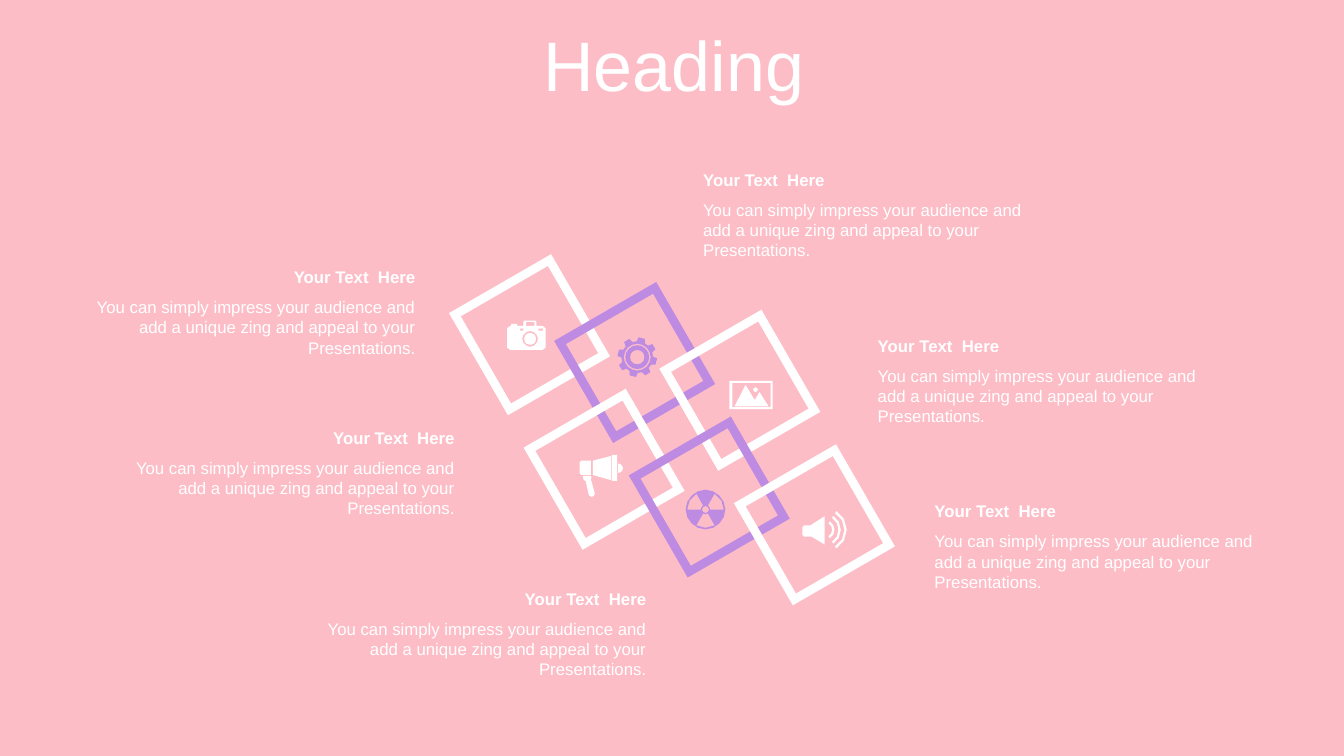
from math import cos, radians, sin

from pptx import Presentation
from pptx.dml.color import RGBColor
from pptx.enum.shapes import MSO_SHAPE
from pptx.enum.text import MSO_ANCHOR, MSO_AUTO_SIZE, PP_ALIGN
from pptx.util import Cm, Pt

PINK, WHITE, PURPLE = "FDBDC7", "FFFFFF", "BE8BE2"
LABEL = "Your Text  Here"
BODY = ("You can simply impress your audience and add a unique zing "
        "and appeal to your Presentations.")


def color(code):
    return RGBColor.from_string(code)


def paint(shape, code):
    shape.shadow.inherit = False
    shape.fill.solid()
    shape.fill.fore_color.rgb = color(code)
    shape.line.fill.background()


def write(shape, text, size=12, bold=False, align=PP_ALIGN.LEFT,
          anchor=MSO_ANCHOR.TOP, fit=MSO_AUTO_SIZE.SHAPE_TO_FIT_TEXT,
          before=0, spacing=1.0):
    frame = shape.text_frame
    frame.word_wrap = True
    frame.auto_size = fit
    frame.vertical_anchor = anchor
    para = frame.paragraphs[0]
    para.alignment = align
    para.space_before = Pt(before)
    para.line_spacing = spacing
    run = para.add_run()
    run.text = text
    font = run.font
    font.name, font.size, font.bold = "Arial", Pt(size), bold
    font.color.rgb = color(WHITE)


def heading(slide, left, top, width, height):
    title = slide.shapes.title
    title.left, title.top = Cm(left), Cm(top)
    title.width, title.height = Cm(width), Cm(height)
    write(title, "Heading", size=50, align=PP_ALIGN.CENTER,
          anchor=MSO_ANCHOR.MIDDLE, fit=MSO_AUTO_SIZE.NONE,
          before=10, spacing=0.8)


def frames(slide, left, top, side):
    """Two slanted rows of three interlocking tilted frames."""
    group = slide.shapes.add_group_shape().shapes
    for row in range(2):
        for col in range(3):
            x = left + 2.65 * col + 1.88 * row
            y = top + 0.7 * col + 3.39 * row
            tile = group.add_shape(MSO_SHAPE.FRAME, Cm(x), Cm(y),
                                   Cm(side), Cm(side))
            tile.adjustments[0] = 0.073
            tile.rotation = 330
            paint(tile, PURPLE if col == 1 else WHITE)


def note(slide, left, top, width, align):
    group = slide.shapes.add_group_shape().shapes
    label = group.add_textbox(Cm(left), Cm(top), Cm(width), Cm(0.76))
    write(label, LABEL, bold=True, align=align)
    body = group.add_textbox(Cm(left), Cm(top + 0.76), Cm(width), Cm(1.8))
    write(body, BODY, align=align)


# Icon outlines are lists of points in tenths of a millimetre.
def polar(x, y, radius, angle):
    turn = radians(angle)
    return x + radius * cos(turn), y + radius * sin(turn)


def arc(x, y, radius, start, end):
    steps = max(2, round(abs(end - start) / 30))
    return [polar(x, y, radius, start + (end - start) * i / steps)
            for i in range(steps + 1)]


def ring(x, y, radius):
    """A circle, with more corners the larger it is."""
    sides = 16 if radius > 25 else 12 if radius > 12 else 8
    return [polar(x, y, radius, 360 * i / sides) for i in range(sides)]


def band(x, y, outer, inner, start, end):
    return arc(x, y, outer, start, end) + arc(x, y, inner, end, start)


def box(left, top, right, bottom):
    return [(left, top), (right, top), (right, bottom), (left, bottom)]


def camera():
    shell = [(43, 0), (71, 0), (74, 3), (74, 13), (89, 13), (97, 19),
             (97, 68), (89, 74), (8, 74), (0, 68), (0, 19), (8, 13),
             (10, 13), (10, 8), (25, 8), (25, 13), (41, 13), (41, 3)]
    return [shell, ring(58, 46, 20), ring(58, 46, 15), box(33, 20, 41, 25),
            box(79, 20, 91, 25), box(48, 3, 69, 13)]


def gear():
    rim = [polar(50, 50, radius, -77 + 45 * tooth + turn)
           for tooth in range(8)
           for radius, turn in ((40, -15), (50, -9), (50, 9), (40, 15))]
    return [rim] + [ring(50, 50, radius) for radius in (34, 30, 18)]


def photo():
    hills = [(41, 10), (64, 48), (76, 28), (99, 64), (13, 64)]
    return [box(0, 0, 109, 71), box(8, 5, 104, 66), hills, ring(66, 22, 6)]


def horn():
    grip = [(28, 53), (30, 58), (28, 61), (38, 97), (36, 104), (30, 106),
            (23, 102), (15, 66), (10, 64), (8, 53)]
    base = [(4, 15), (28, 15), (28, 51), (4, 51), (0, 47), (0, 19)]
    cone = [(79, 3), (79, 64), (33, 51), (33, 15)]
    return [grip, base, cone, box(81, 0, 94, 66), arc(97, 34, 12, -90, 90)]


def hazard():
    return ([ring(50, 50, 50), ring(50, 50, 9)]
            + [band(50, 50, 46, 12, start, start + 60)
               for start in (60, 180, 300)])


def sound():
    cone = [(56, 13), (56, 84), (23, 64), (4, 64), (0, 59), (0, 41),
            (4, 36), (20, 36)]
    return [cone] + [band(56, 47, radius, radius - 6, -58, 58)
                     for radius in (25, 41, 56)]


def icon(slide, paths, left, top, code):
    """Join closed outlines into one shape; nested ones become holes."""
    first, *others = paths
    pen = slide.shapes.build_freeform(*first[0], scale=Cm(0.01))
    pen.add_line_segments(first[1:])
    for points in others:
        pen.move_to(*points[0])
        pen.add_line_segments(points[1:])
    paint(pen.convert_to_shape(Cm(left), Cm(top)), code)


def main():
    deck = Presentation()
    deck.slide_width, deck.slide_height = Cm(33.87), Cm(19.05)
    slide = deck.slides.add_slide(deck.slide_layouts[5])
    slide.background.fill.solid()
    slide.background.fill.fore_color.rgb = color(PINK)

    heading(slide, 0.9, 0.79, 32.16, 2.01)
    frames(slide, 11.86, 6.95, 2.97)
    for left, top in ((17.47, 4.15), (21.87, 8.33), (23.3, 12.5)):
        note(slide, left, top, 8.81, PP_ALIGN.LEFT)
    for left, top in ((1.63, 6.6), (2.62, 10.65), (7.45, 14.71)):
        note(slide, left, top, 9.09, PP_ALIGN.RIGHT)
    for draw, left, top, code in (
            (sound, 20.22, 12.88, WHITE), (hazard, 17.28, 12.34, PURPLE),
            (horn, 14.61, 11.46, WHITE), (camera, 12.78, 8.08, WHITE),
            (photo, 18.38, 9.6, WHITE), (gear, 15.56, 8.5, PURPLE)):
        icon(slide, draw(), left, top, code)
    deck.save("out.pptx")


if __name__ == "__main__":
    main()
